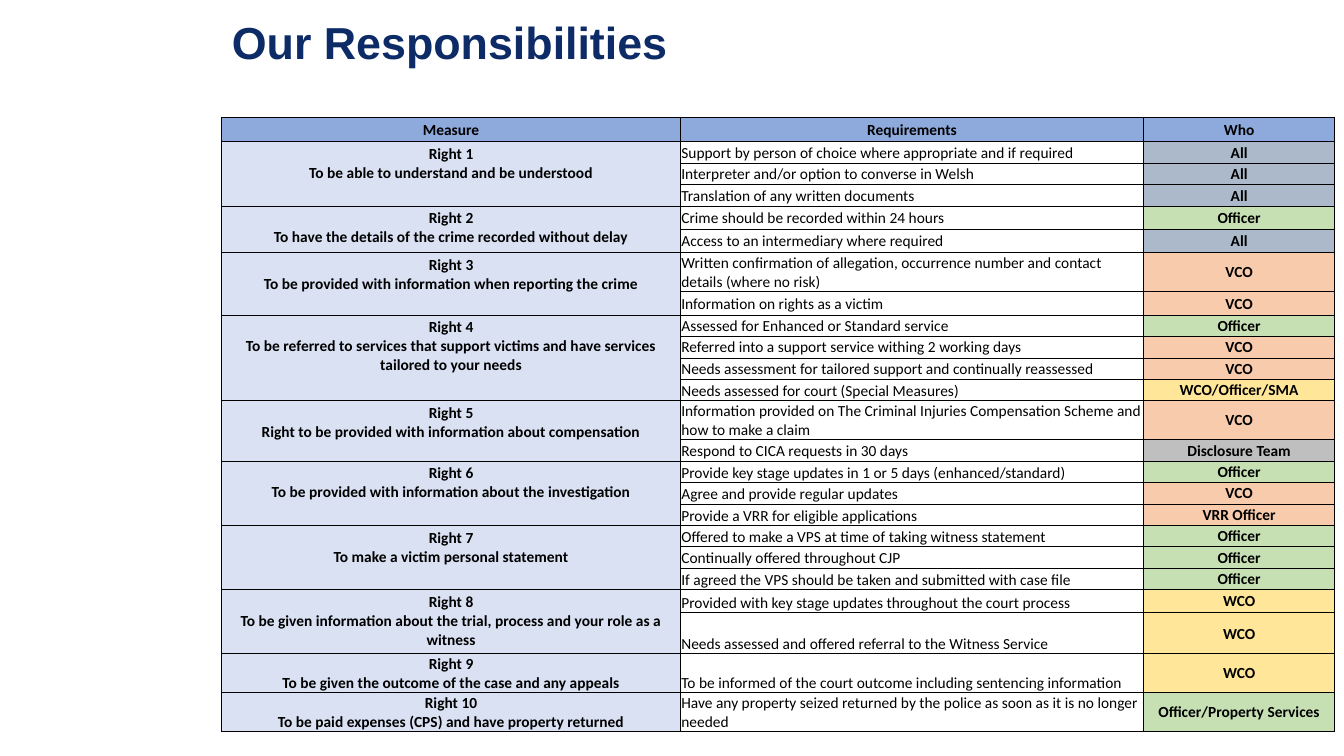
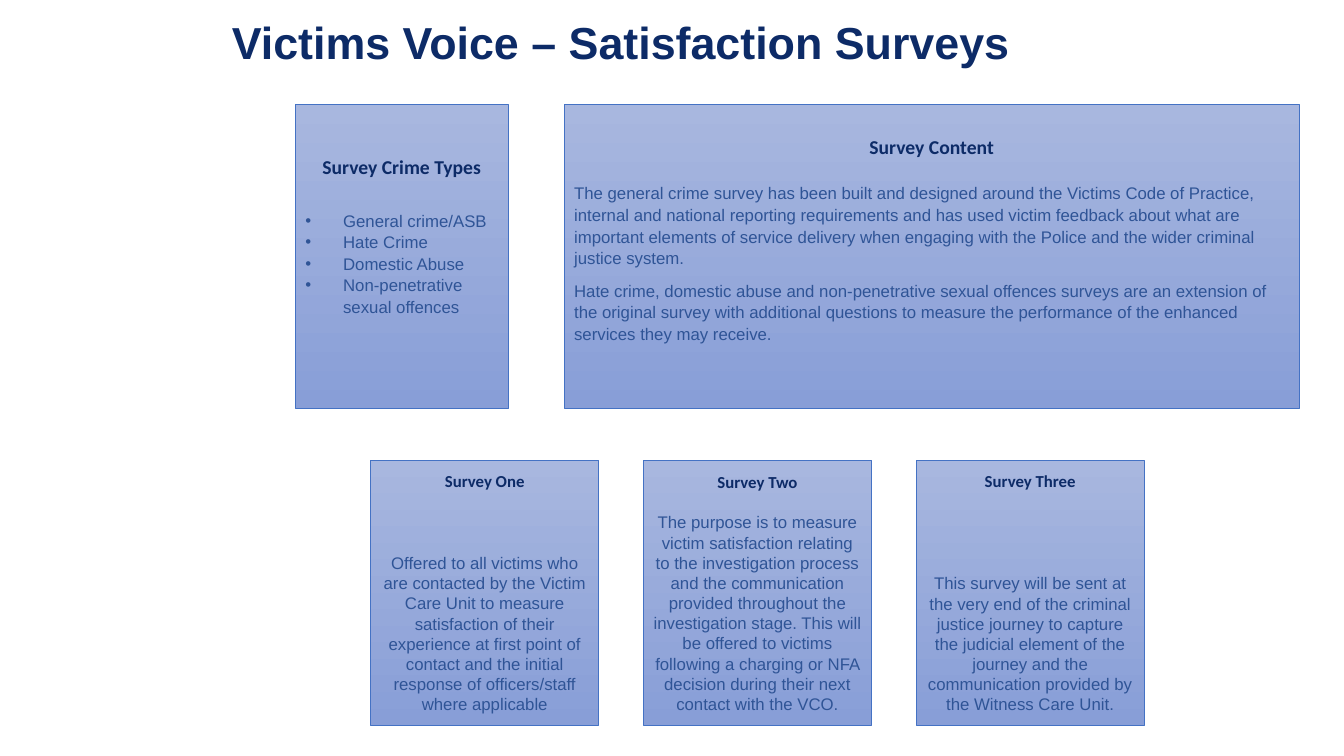
from lxml import etree
from pptx import Presentation
from pptx.dml.color import RGBColor
from pptx.enum import shapes, text
from pptx.oxml import ns
from pptx.util import Pt

NAVY = RGBColor(0x0D, 0x2B, 0x67)
BLUE = RGBColor(0x2F, 0x54, 0x96)
OUTLINE = RGBColor(0x44, 0x72, 0xC4)
PANEL_TOP = RGBColor(0xA8, 0xB7, 0xDF)
PANEL_BOTTOM = RGBColor(0x88, 0x9E, 0xD7)
BLACK = RGBColor(0, 0, 0)
HEADER = RGBColor(0x8E, 0xA9, 0xDB)
MEASURE = RGBColor(0xD9, 0xE1, 0xF2)
SLATE = RGBColor(0xAC, 0xB9, 0xCA)
GREEN = RGBColor(0xC6, 0xE0, 0xB4)
SALMON = RGBColor(0xF8, 0xCB, 0xAD)
YELLOW = RGBColor(0xFF, 0xE6, 0x99)
GREY = RGBColor(0xBF, 0xBF, 0xBF)

WHO_COLOURS = {
    "All": SLATE, "Officer": GREEN, "Officer/Property Services": GREEN,
    "VCO": SALMON, "VRR Officer": SALMON, "WCO": YELLOW,
    "WCO/Officer/SMA": YELLOW, "Disclosure Team": GREY,
}

CENTER, LEFT = text.PP_ALIGN.CENTER, text.PP_ALIGN.LEFT
TOP, MIDDLE, BOTTOM = (text.MSO_ANCHOR.TOP, text.MSO_ANCHOR.MIDDLE,
                       text.MSO_ANCHOR.BOTTOM)
TIGHT = (0.7, 0.7, 0.7, 0)
ROOMY = (4.3, 2.2, 4.3, 2.2)

# Row heights
SMALL, MEDIUM, DOUBLE = 15.3, 16.7, 27.8

# Each right: name, description, then (requirement, who, row height)
RIGHTS = [
    ("Right 1", "To be able to understand and be understood", [
        ("Support by person of choice where appropriate and if required", "All", SMALL),
        ("Interpreter and/or option to converse in Welsh", "All", SMALL),
        ("Translation of any written documents", "All", SMALL)]),
    ("Right 2", "To have the details of the crime recorded without delay", [
        ("Crime should be recorded within 24 hours", "Officer", MEDIUM),
        ("Access to an intermediary where required", "All", MEDIUM)]),
    ("Right 3", "To be provided with information when reporting the crime", [
        ("Written confirmation of allegation, occurrence number and contact "
         "details (where no risk)", "VCO", DOUBLE),
        ("Information on rights as a victim", "VCO", MEDIUM)]),
    ("Right 4", "To be referred to services that support victims and have "
     "services tailored to your needs", [
         ("Assessed for Enhanced or Standard service", "Officer", SMALL),
         ("Referred into a support service withing 2 working days", "VCO", SMALL),
         ("Needs assessment for tailored support and continually reassessed",
          "VCO", SMALL),
         ("Needs assessed for court (Special Measures)", "WCO/Officer/SMA", SMALL)]),
    ("Right 5", "Right to be provided with information about compensation", [
        ("Information provided on The Criminal Injuries Compensation Scheme and "
         "how to make a claim", "VCO", DOUBLE),
        ("Respond to CICA requests in 30 days", "Disclosure Team", SMALL)]),
    ("Right 6", "To be provided with information about the investigation", [
        ("Provide key stage updates in 1 or 5 days (enhanced/standard)",
         "Officer", SMALL),
        ("Agree and provide regular updates", "VCO", SMALL),
        ("Provide a VRR for eligible applications", "VRR Officer", SMALL)]),
    ("Right 7", "To make a victim personal statement", [
        ("Offered to make a VPS at time of taking witness statement",
         "Officer", SMALL),
        ("Continually offered throughout CJP", "Officer", SMALL),
        ("If agreed the VPS should be taken and submitted with case file",
         "Officer", SMALL)]),
    ("Right 8", "To be given information about the trial, process and your role "
     "as a witness", [
         ("Provided with key stage updates throughout the court process",
          "WCO", MEDIUM),
         ("Needs assessed and offered referral to the Witness Service",
          "WCO", 29.2)]),
    ("Right 9", "To be given the outcome of the case and any appeals", [
        ("To be informed of the court outcome including sentencing information",
         "WCO", DOUBLE)]),
    ("Right 10", "To be paid expenses (CPS) and have property returned", [
        ("Have any property seized returned by the police as soon as it is no "
         "longer needed", "Officer/Property Services", DOUBLE)]),
]
FIRST_BOTTOM_ROW = 11  # requirements sit at the cell bottom from this row on

CRIME_TYPES = ["General crime/ASB", "Hate Crime", "Domestic Abuse",
               "Non-penetrative sexual offences"]
SURVEY_CONTENT = [
    "The general crime survey has been built and designed around the Victims "
    "Code of Practice, internal and national reporting requirements and has used "
    "victim feedback about what are important elements of service delivery when "
    "engaging with the Police and the wider criminal justice system.",
    "Hate crime, domestic abuse and non-penetrative sexual offences surveys are "
    "an extension of the original survey with additional questions to measure "
    "the performance of the enhanced services they may receive.",
]
# Heading, gap below it, text
SURVEYS = [
    ("Survey One", 44,
     "Offered to all victims who are contacted by the Victim Care Unit to "
     "measure satisfaction of their experience at first point of contact and the "
     "initial response of officers/staff where applicable"),
    ("Survey Two", 14.7,
     "The purpose is to measure victim satisfaction relating to the "
     "investigation process and the communication provided throughout the "
     "investigation stage. This will be offered to victims following a charging "
     "or NFA decision during their next contact with the VCO."),
    ("Survey Three", 58.6,
     "This survey will be sent at the very end of the criminal justice journey "
     "to capture the judicial element of the journey and the communication "
     "provided by the Witness Care Unit."),
]


class Deck:
    """Holds the presentation, its style and the slide being filled."""

    def __init__(self):
        self.prs = Presentation()
        self.prs.slide_width, self.prs.slide_height = Pt(960), Pt(540)
        self.slide = None

    def add_slide(self, title):
        self.slide = self.prs.slides.add_slide(self.prs.slide_layouts[5])
        holder = self.slide.shapes.title
        holder.left, holder.top = Pt(158.4), Pt(9.4)
        holder.width, holder.height = Pt(794), Pt(46)
        holder.text_frame.vertical_anchor = MIDDLE
        line = holder.text_frame.paragraphs[0]
        line.alignment, line.line_spacing = LEFT, 0.9
        self.run(line, title, 32, "Arial", NAVY, True)

    def run(self, paragraph, words, size, font, colour, bold=False):
        run = paragraph.add_run()
        run.text = words
        run.font.size, run.font.name, run.font.bold = Pt(size), font, bold
        run.font.color.rgb = colour

    def panel(self, left, top, width, height, bottom_inset=3.6):
        """Add a gradient rectangle and return its text frame."""
        panel = self.slide.shapes.add_shape(
            shapes.MSO_SHAPE.RECTANGLE, Pt(left), Pt(top), Pt(width), Pt(height))
        panel.shadow.inherit = False
        panel.fill.gradient()
        panel.fill.gradient_angle = 270
        for stop, colour in zip(panel.fill.gradient_stops, (PANEL_TOP, PANEL_BOTTOM)):
            stop.color.rgb = colour
        panel.line.color.rgb, panel.line.width = OUTLINE, Pt(0.5)
        frame = panel.text_frame
        frame.word_wrap, frame.vertical_anchor = True, MIDDLE
        frame.margin_bottom = Pt(bottom_inset)
        return frame

    def heading(self, frame, words, size, gap):
        heading = frame.paragraphs[0]
        heading.alignment, heading.space_after = CENTER, Pt(gap)
        self.run(heading, words, size, "Calibri", NAVY, True)

    def body(self, frame, words, align=LEFT, spacing=1.07, before=0, bullet=False):
        line = frame.add_paragraph()
        if bullet:
            props = line._p.get_or_add_pPr()
            props.set("marL", str(Pt(27)))
            props.set("indent", str(-Pt(27)))
            etree.SubElement(props, ns.qn("a:buFont"), typeface="Arial")
            etree.SubElement(props, ns.qn("a:buChar"), char="•")
        line.alignment, line.line_spacing = align, spacing
        if before:
            line.space_before = Pt(before)
        self.run(line, words, 12, "Arial", BLUE)

    def table(self, left, top, widths, heights):
        table = self.slide.shapes.add_table(
            len(heights), len(widths), Pt(left), Pt(top),
            Pt(sum(widths)), Pt(sum(heights))).table
        table.first_row = table.horz_banding = False
        for column, width in zip(table.columns, widths):
            column.width = Pt(width)
        for row, height in zip(table.rows, heights):
            row.height = Pt(height)
        for cell in table.iter_cells():
            self.border(cell)
        return table

    def border(self, cell):
        props = cell._tc.get_or_add_tcPr()
        for side in ("lnL", "lnR", "lnT", "lnB"):
            edge = etree.SubElement(props, ns.qn("a:" + side), w=str(Pt(0.5)))
            fill = etree.SubElement(edge, ns.qn("a:solidFill"))
            etree.SubElement(fill, ns.qn("a:srgbClr"), val=str(BLACK))

    def cell(self, cell, lines, fill=None, bold=True, align=CENTER,
             anchor=MIDDLE, insets=TIGHT):
        cell.margin_left, cell.margin_top, cell.margin_right, cell.margin_bottom = (
            Pt(inset) for inset in insets)
        cell.vertical_anchor = anchor
        if fill is None:
            cell.fill.background()
        else:
            cell.fill.solid()
            cell.fill.fore_color.rgb = fill
        paragraph = cell.text_frame.paragraphs[0]
        paragraph.alignment = align
        for number, words in enumerate(lines):
            if number:
                paragraph.add_line_break()
            self.run(paragraph, words, 11, "Calibri", BLACK, bold)


def responsibilities(deck):
    deck.add_slide("Our Responsibilities")
    heights = [17.3] + [height for *_, duties in RIGHTS for *_, height in duties]
    table = deck.table(158.4, 84, (327.6, 331, 136.3), heights)
    for column, label in enumerate(("Measure", "Requirements", "Who")):
        deck.cell(table.cell(0, column), [label], HEADER)
    row = 1
    for name, description, duties in RIGHTS:
        measure = table.cell(row, 0)
        shared = len(duties) > 1
        if shared:
            measure.merge(table.cell(row + len(duties) - 1, 0))
        deck.cell(measure, [name, description], MEASURE,
                  anchor=TOP if shared else MIDDLE,
                  insets=ROOMY if shared else TIGHT)
        for requirement, who, _ in duties:
            deck.cell(table.cell(row, 1), [requirement], bold=False, align=LEFT,
                      anchor=BOTTOM if row >= FIRST_BOTTOM_ROW else MIDDLE)
            deck.cell(table.cell(row, 2), [who], WHO_COLOURS[who])
            row += 1


def surveys(deck):
    deck.add_slide("Victims Voice – Satisfaction Surveys")
    crime_types = deck.panel(211, 74.8, 152, 217, bottom_inset=33.6)
    deck.heading(crime_types, "Survey Crime Types", 14, 22)
    for crime in CRIME_TYPES:
        deck.body(crime_types, crime, bullet=True)

    content = deck.panel(403, 74.8, 525, 217, bottom_inset=28.6)
    deck.heading(content, "Survey Content", 14, 17)
    for number, words in enumerate(SURVEY_CONTENT):
        deck.body(content, words, before=8 if number else 0)

    for number, (name, gap, words) in enumerate(SURVEYS):
        survey = deck.panel(264.8 + 194.8 * number, 328.6, 163, 189.4)
        deck.heading(survey, name, 12, gap)
        deck.body(survey, words, align=CENTER, spacing=1.0)


def main():
    deck = Deck()
    responsibilities(deck)
    surveys(deck)
    deck.prs.save("out.pptx")


if __name__ == "__main__":
    main()
